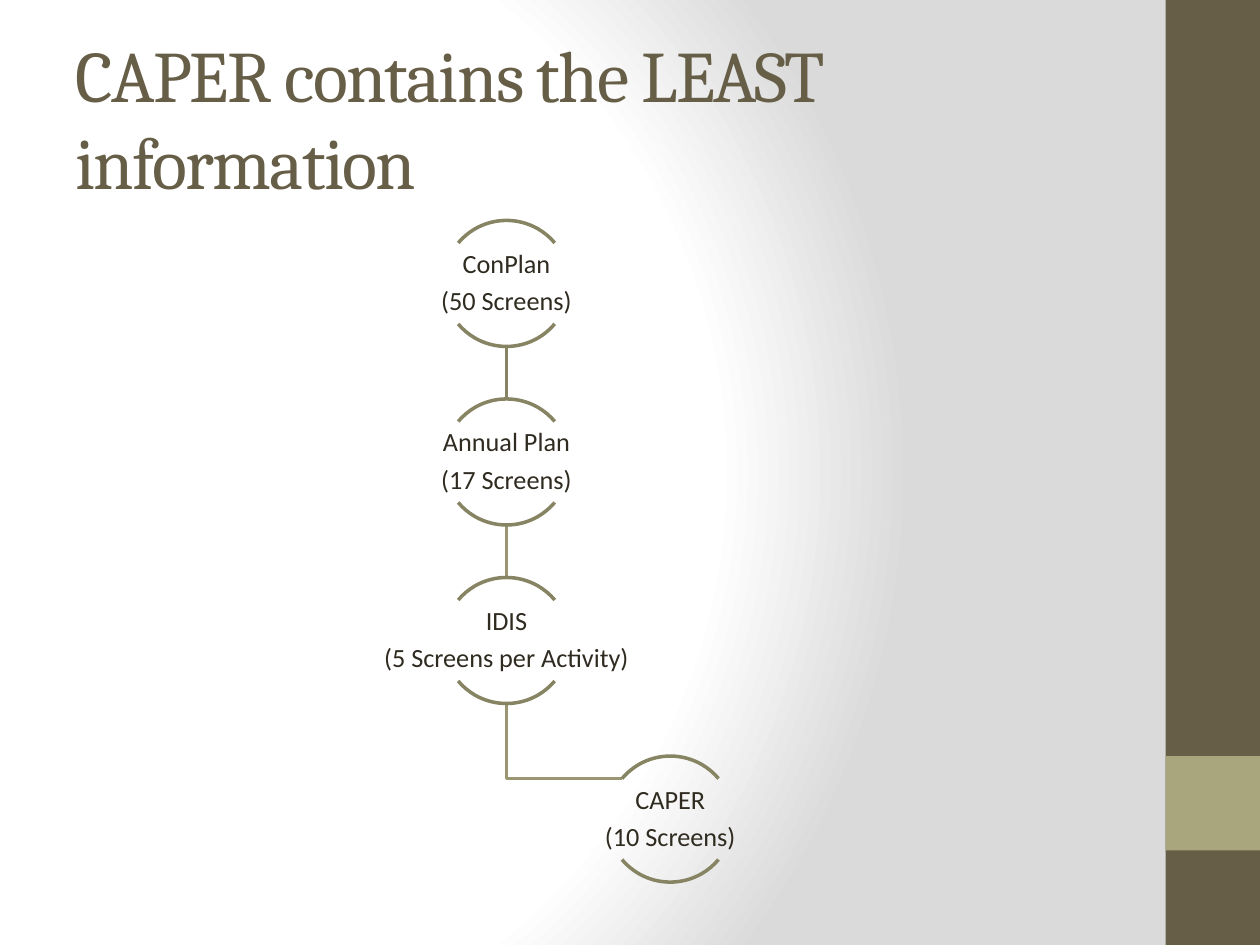
"""Build a slide that shows the planning steps as a chain of arc-framed labels."""
import pptx
import pptx.dml.color
import pptx.enum.shapes
import pptx.enum.text
import pptx.oxml
import pptx.oxml.ns
import pptx.util

Inches, Pt = pptx.util.Inches, pptx.util.Pt
SHAPE = pptx.enum.shapes.MSO_SHAPE
MIDDLE = pptx.enum.text.MSO_ANCHOR.MIDDLE
ALIGN = pptx.enum.text.PP_ALIGN

BROWN, SAGE, INK = "675E47", "A9A57C", "2F2B20"
ARC, LINK = "878463", "999671"
CIRCLE = 1.0
TOP, STEP = 1.75, 1.417
MAIN_X, CHILD_X = 4.02, 5.32
STAGES = [
    (MAIN_X, "ConPlan", "(50 Screens)"),
    (MAIN_X, "Annual Plan", "(17 Screens)"),
    (MAIN_X, "IDIS", "(5 Screens per Activity)"),
    (CHILD_X, "CAPER", "(10 Screens)"),
]


def color(value):
    return pptx.dml.color.RGBColor.from_string(value)


class Board:
    def __init__(self, slide):
        self.slide = slide
        self.shapes = slide.shapes

    def background(self, stops):
        self.slide.background.fill.gradient()
        old = self.slide.element.find(".//" + pptx.oxml.ns.qn("a:gradFill"))
        marks = "".join(
            f'<a:gs pos="{place * 1000}"><a:srgbClr val="{value}"/></a:gs>'
            for place, value in stops)
        new = pptx.oxml.parse_xml(
            f'<a:gradFill {pptx.oxml.ns.nsdecls("a")} rotWithShape="1">'
            f'<a:gsLst>{marks}</a:gsLst><a:path path="circle">'
            '<a:fillToRect l="20000" t="50000" r="100000" b="50000"/>'
            '</a:path></a:gradFill>')
        old.getparent().replace(old, new)

    def style(self, paragraph, font, size, value):
        for span in paragraph.runs:
            span.font.name = font
            span.font.size = Pt(size)
            span.font.color.rgb = color(value)

    def title(self, text, left, top, width, height):
        box = self.shapes.title
        box.left, box.top = Inches(left), Inches(top)
        box.width, box.height = Inches(width), Inches(height)
        frame = box.text_frame
        frame.text = text
        frame.word_wrap = True
        frame.auto_size = pptx.enum.text.MSO_AUTO_SIZE.NONE
        frame.vertical_anchor = MIDDLE
        para = frame.paragraphs[0]
        para.alignment = ALIGN.LEFT
        self.style(para, "Cambria", 41.4, BROWN)
        para.runs[0].font._element.set("spc", "-100")

    def band(self, left, top, width, height, fill):
        box = self.shapes.add_shape(
            SHAPE.RECTANGLE, *map(Inches, (left, top, width, height)))
        box.shadow.inherit = False
        box.fill.solid()
        box.fill.fore_color.rgb = color(fill)
        box.line.fill.background()

    def outline(self, shape, value):
        shape.line.color.rgb = color(value)
        shape.line.width = Pt(2)

    def link(self, x, start, end, value):
        line = self.shapes.add_connector(
            pptx.enum.shapes.MSO_CONNECTOR.STRAIGHT,
            *map(Inches, (x, start, x, end)))
        self.outline(line, value)
        line._element.spPr.append(pptx.oxml.parse_xml(
            f'<a:effectLst {pptx.oxml.ns.nsdecls("a")}/>'))

    def bent_link(self, points, value):
        corners = [(Inches(x), Inches(y)) for x, y in points]
        builder = self.shapes.build_freeform(*corners[0])
        builder.add_line_segments(corners[1:], close=False)
        shape = builder.convert_to_shape()
        shape.shadow.inherit = False
        shape.fill.background()
        self.outline(shape, value)

    def arc(self, left, top, start, end):
        shape = self.shapes.add_shape(
            SHAPE.ARC, *map(Inches, (left, top, CIRCLE, CIRCLE)))
        shape.shadow.inherit = False
        shape.fill.background()
        shape.adjustments[0], shape.adjustments[1] = start, end
        self.outline(shape, ARC)

    def label(self, left, top, width, height, lines):
        box = self.shapes.add_textbox(
            *map(Inches, (left, top, width, height)))
        frame = box.text_frame
        frame.text = "\n".join(lines)
        frame.word_wrap = True
        frame.vertical_anchor = MIDDLE
        frame.margin_left = frame.margin_right = Inches(0.01)
        frame.margin_top = frame.margin_bottom = Inches(0.01)
        for para in frame.paragraphs:
            para.alignment = ALIGN.CENTER
            para.line_spacing = 0.9
            para.space_after = Pt(5)
            self.style(para, "Calibri", 15, INK)

    def stage(self, center, top, lines):
        left = center - CIRCLE / 2
        self.arc(left, top, 132, 192)
        self.arc(left, top, 24, 84)
        self.label(center - 1, top + 0.18, 2, 0.64, lines)


def main():
    deck = pptx.Presentation()
    deck.slide_width, deck.slide_height = Inches(10), Inches(7.5)
    board = Board(deck.slides.add_slide(deck.slide_layouts[5]))
    board.background([(0, "FFFFFF"), (75, "FFFFFF"), (100, "DADADA")])
    board.band(9.25, 0, 0.75, 7.5, BROWN)
    board.band(9.25, 6, 0.75, 0.75, SAGE)
    board.title("CAPER contains the LEAST information", 0.5, 0.3, 8.33, 1.25)

    tops = [TOP + STEP * index for index in range(len(STAGES))]
    elbow = tops[3] + 0.18
    board.bent_link([(MAIN_X, tops[2] + CIRCLE), (MAIN_X, elbow),
                     (CHILD_X - 0.38, elbow)], LINK)
    board.link(MAIN_X, tops[1] + CIRCLE, tops[2], LINK)
    board.link(MAIN_X, tops[0] + CIRCLE, tops[1], ARC)
    for top, (center, *lines) in zip(tops, STAGES):
        board.stage(center, top, lines)
    deck.save("out.pptx")


if __name__ == "__main__":
    main()
